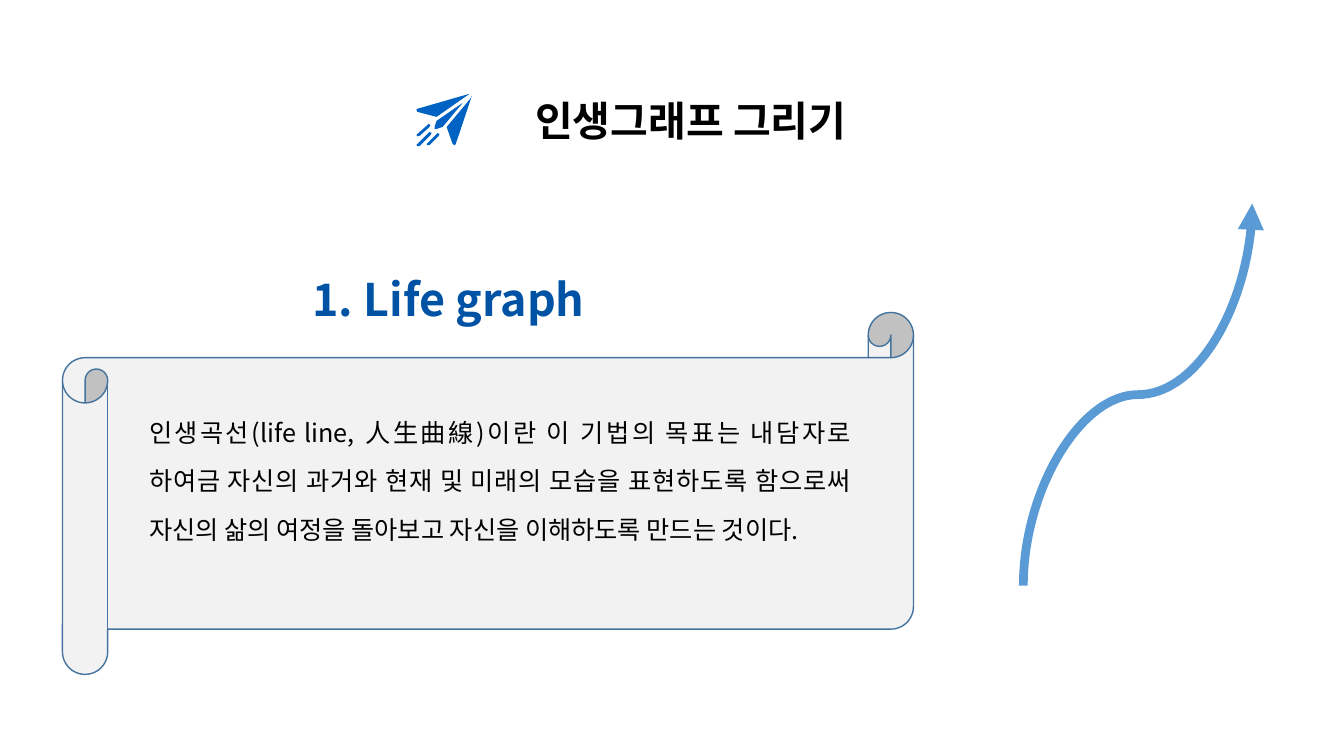
import pptx
import pptx.util
import pptx.dml.color
import pptx.enum.shapes
import pptx.enum.text
import pptx.oxml.ns
from pptx.util import Inches

FONT = "Noto Sans CJK KR"
ALIGN = pptx.enum.text.PP_ALIGN
ANCHOR = pptx.enum.text.MSO_ANCHOR
AUTO_SIZE = pptx.enum.text.MSO_AUTO_SIZE


def rgb(color):
    return pptx.dml.color.RGBColor.from_string(color)


def write(sp, text, size, color, bold, align, spacing, inset, anchor, auto_size):
    """Fill a shape with one run; inset is (horizontal, vertical) in inches."""
    tf = sp.text_frame
    tf.word_wrap = True
    tf.auto_size = auto_size
    tf.vertical_anchor = anchor
    tf.margin_left = tf.margin_right = Inches(inset[0])
    tf.margin_top = tf.margin_bottom = Inches(inset[1])
    p = tf.paragraphs[0]
    p.alignment = align
    p.line_spacing = spacing
    r = p.add_run()
    r.text = text
    r.font.size = pptx.util.Pt(size)
    r.font.bold = bold
    r.font.name = FONT
    r.font.color.rgb = rgb(color)


prs = pptx.Presentation()
prs.slide_width = Inches(13.33)
prs.slide_height = Inches(7.5)
s = prs.slides.add_slide(prs.slide_layouts[5])

# Scroll
scroll = s.shapes.add_shape(
    pptx.enum.shapes.MSO_SHAPE.HORIZONTAL_SCROLL,
    Inches(0.62), Inches(3.1), Inches(8.44), Inches(3.59))
scroll.shadow.inherit = False
scroll.fill.solid()
scroll.fill.fore_color.rgb = rgb("F2F2F2")
scroll.line.color.rgb = rgb("43739E")
scroll.line.width = pptx.util.Pt(1)

# Title and heading
title = s.shapes.title
title.left, title.top = Inches(4.96), Inches(0.9)
title.width, title.height = Inches(3.78), Inches(0.7)
write(title, "인생그래프 그리기", 29.3, "000000", True, ALIGN.CENTER, 0.9,
      (0.1, 0.1), ANCHOR.TOP, AUTO_SIZE.NONE)

heading = s.shapes.add_textbox(Inches(1.53), Inches(2.42), Inches(5.84), Inches(0.94))
write(heading, "1. Life graph", 32, "0052A5", True, ALIGN.CENTER, 1.0,
      (0.13, 0.13), ANCHOR.BOTTOM, AUTO_SIZE.NONE)

# Paper plane: outlines in hundredths of an inch
plane_parts = [
    [(466, 93), (414, 108), (413, 109), (414, 111), (433, 116)],
    [(459, 102), (433, 120), (431, 126), (431, 128), (433, 128), (439, 126)],
    [(468, 95), (468, 96), (443, 126), (449, 143), (451, 144), (452, 143)],
]
# Each speed streak: upper end, lower end
for (x1, y1), (x2, y2) in [((425, 123), (413, 135)),
                           ((434, 132), (423, 144)),
                           ((426, 131), (413, 145))]:
    plane_parts.append([
        (x1, y1), (x1 - 1, y1 + 1), (x2 + 1, y2 - 2), (x2, y2 - 1),
        (x2 + 1, y2), (x2 + 3, y2), (x1 + 1, y1 + 3), (x1 + 2, y1 + 1)])

plane = s.shapes.add_group_shape()
for points in plane_parts:
    outline = plane.shapes.build_freeform(*points[0], scale=Inches(0.01))
    outline.add_line_segments(points[1:], close=True)
    part = outline.convert_to_shape()
    part.shadow.inherit = False
    part.fill.solid()
    part.fill.fore_color.rgb = rgb("0063C4")
    part.line.fill.background()

# Explanation on the scroll
body = s.shapes.add_textbox(Inches(1.38), Inches(3.91), Inches(7.16), Inches(2.04))
write(body,
      "인생곡선(life line, 人生曲線)이란 이 기법의 목표는 내담자로 하여금 자신의 과거와 "
      "현재 및 미래의 모습을 표현하도록 함으로써 자신의 삶의 여정을 돌아보고 자신을 "
      "이해하도록 만드는 것이다.",
      18, "000000", False, ALIGN.JUSTIFY, 1.6, (0.1, 0.05), ANCHOR.TOP,
      AUTO_SIZE.SHAPE_TO_FIT_TEXT)

# Rising life curve: a flipped S turned a quarter
curve = s.shapes.add_connector(
    pptx.enum.shapes.MSO_CONNECTOR.CURVE,
    Inches(13.18), Inches(5.05), Inches(9.39), Inches(2.78))
curve.line.color.rgb = rgb("5B9BD5")
curve.line.width = pptx.util.Pt(6.25)
spPr = curve._element.spPr
spPr.find(pptx.oxml.ns.qn("a:xfrm")).set("rot", str(90 * 60000))
ln = spPr.find(pptx.oxml.ns.qn("a:ln"))
ln.append(ln.makeelement(pptx.oxml.ns.qn("a:tailEnd"), {"type": "triangle"}))
spPr.append(spPr.makeelement(pptx.oxml.ns.qn("a:effectLst")))

prs.save("out.pptx")
